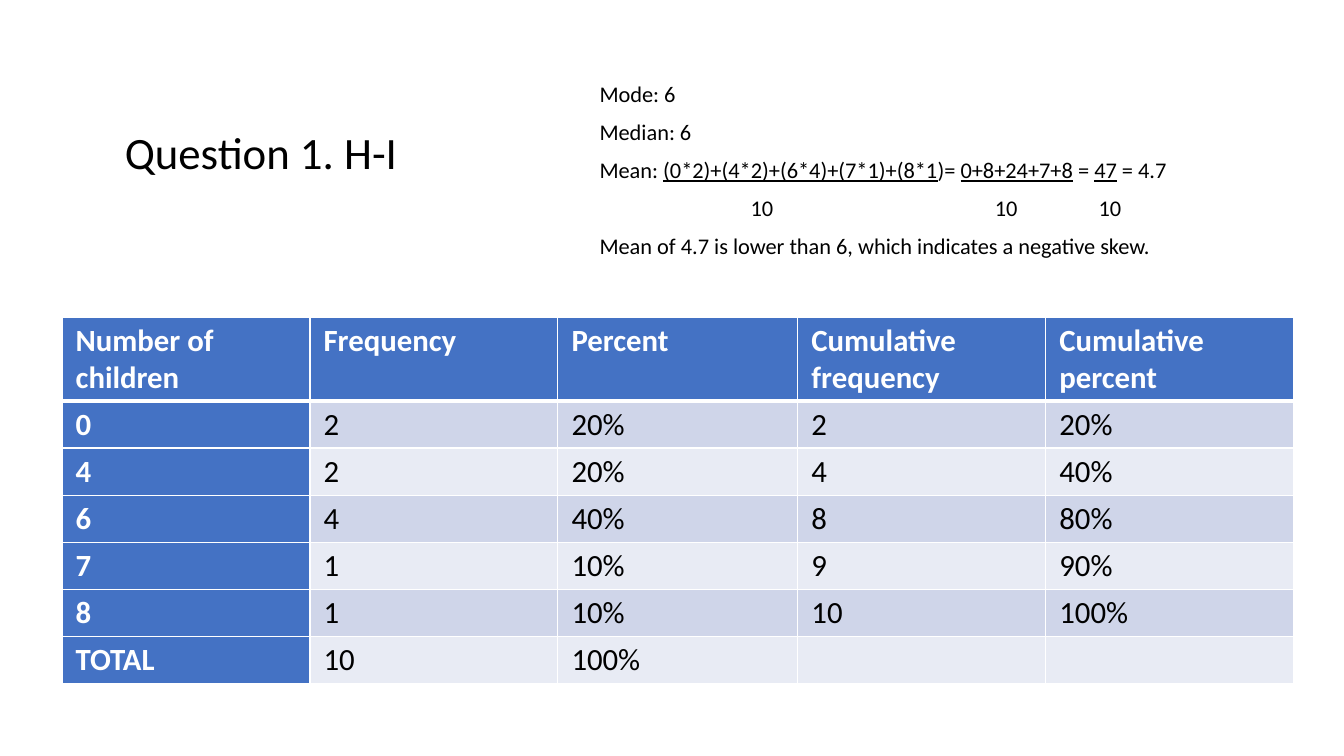
from lxml import etree
from pptx import Presentation
from pptx.dml.color import RGBColor
from pptx.enum import text
from pptx.oxml import ns
from pptx.util import Pt

FONT = "Calibri"
COLORS = {
    "black": "000000",
    "white": "FFFFFF",
    "blue": "4472C4",
    "band_dark": "CFD5E9",
    "band_light": "E8EBF4",
}

# Each line is a list of (text, underlined) runs
STATISTICS = [
    [("Mode: 6", False)],
    [("Median: 6", False)],
    [("Mean: ", False), ("(0*2)+(4*2)+(6*4)+(7*1)+(8*1", True), (")= ", False),
     ("0+8+24+7+8", True), (" = ", False), ("47", True), (" = 4.7", False)],
    [("\t10\t10\t10", False)],
    [("Mean of 4.7 is lower than 6, which indicates a negative skew.", False)],
]
DENOMINATOR_TABS = (116, 290.5, 364.5)

ROWS = [
    ["Number of children", "Frequency", "Percent", "Cumulative frequency", "Cumulative percent"],
    ["0", "2", "20%", "2", "20%"],
    ["4", "2", "20%", "4", "40%"],
    ["6", "4", "40%", "8", "80%"],
    ["7", "1", "10%", "9", "90%"],
    ["8", "1", "10%", "10", "100%"],
    ["TOTAL", "10", "100%", "", ""],
]
COLUMN_WIDTHS = (177.1, 177.1, 171.4, 177.1, 177.1)
HEADER_HEIGHT, ROW_HEIGHT = 58.3, 32.4


def rgb(name):
    return RGBColor.from_string(COLORS[name])


def style_font(p, size, color, bold=False):
    p.font.name = FONT
    p.font.size = Pt(size)
    p.font.bold = bold
    p.font.color.rgb = rgb(color)


def add_tabs(p, stops):
    tabs = etree.SubElement(p._p.get_or_add_pPr(), ns.qn("a:tabLst"))
    for stop in stops:
        etree.SubElement(tabs, ns.qn("a:tab"), pos=str(Pt(stop)), algn="ctr")


def add_text(s, left, top, width, height, lines, size):
    tf = s.shapes.add_textbox(Pt(left), Pt(top), Pt(width), Pt(height)).text_frame
    tf.word_wrap = True
    tf.vertical_anchor = text.MSO_ANCHOR.MIDDLE
    for i, line in enumerate(lines):
        p = tf.add_paragraph() if i else tf.paragraphs[0]
        p.line_spacing = 0.9
        if i:
            p.space_before = Pt(10)
        if line[0][0].startswith("\t"):
            add_tabs(p, DENOMINATOR_TABS)
        style_font(p, size, "black")
        for words, underlined in line:
            r = p.add_run()
            r.text = words
            if underlined:
                r.font.underline = True


def add_border(cell, side, width):
    ln = etree.SubElement(cell._tc.get_or_add_tcPr(), ns.qn(f"a:ln{side}"), w=str(Pt(width)))
    fill = etree.SubElement(ln, ns.qn("a:solidFill"))
    etree.SubElement(fill, ns.qn("a:srgbClr"), val=COLORS["white"])


def fill_cell(cell, row, col, words):
    # The header rule is thicker than the grid
    widths = {"L": 0.96, "R": 0.96, "T": 3 if row == 1 else 0.96, "B": 3 if row == 0 else 0.96}
    for side, width in widths.items():
        add_border(cell, side, width)
    heading = row == 0 or col == 0
    band = "band_dark" if row % 2 else "band_light"
    cell.fill.solid()
    cell.fill.fore_color.rgb = rgb("blue" if heading else band)
    cell.margin_left = cell.margin_right = Pt(9.8)
    cell.margin_top = cell.margin_bottom = Pt(3.6)
    p = cell.text_frame.paragraphs[0]
    if words:
        p.add_run().text = words
    style_font(p, 22, "white" if heading else "black", heading)


def add_frequency_table(s, left, top):
    height = HEADER_HEIGHT + ROW_HEIGHT * (len(ROWS) - 1)
    table = s.shapes.add_table(len(ROWS), len(COLUMN_WIDTHS), Pt(left), Pt(top),
                               Pt(sum(COLUMN_WIDTHS)), Pt(height)).table
    table.first_col = True
    for col, width in enumerate(COLUMN_WIDTHS):
        table.columns[col].width = Pt(width)
    for row, values in enumerate(ROWS):
        table.rows[row].height = Pt(ROW_HEIGHT if row else HEADER_HEIGHT)
        for col, words in enumerate(values):
            fill_cell(table.cell(row, col), row, col, words)


def main():
    prs = Presentation()
    prs.slide_width, prs.slide_height = Pt(960), Pt(540)
    s = prs.slides.add_slide(prs.slide_layouts[6])

    # Title and worked statistics
    add_text(s, 82.1, 46.1, 280, 129.6, [[("Question 1. H-I", False)]], 32)
    add_text(s, 421.2, 46.1, 472.3, 152.6, STATISTICS, 16)

    # Frequency distribution
    add_frequency_table(s, 44.3, 226.4)

    prs.save("out.pptx")


if __name__ == "__main__":
    main()
